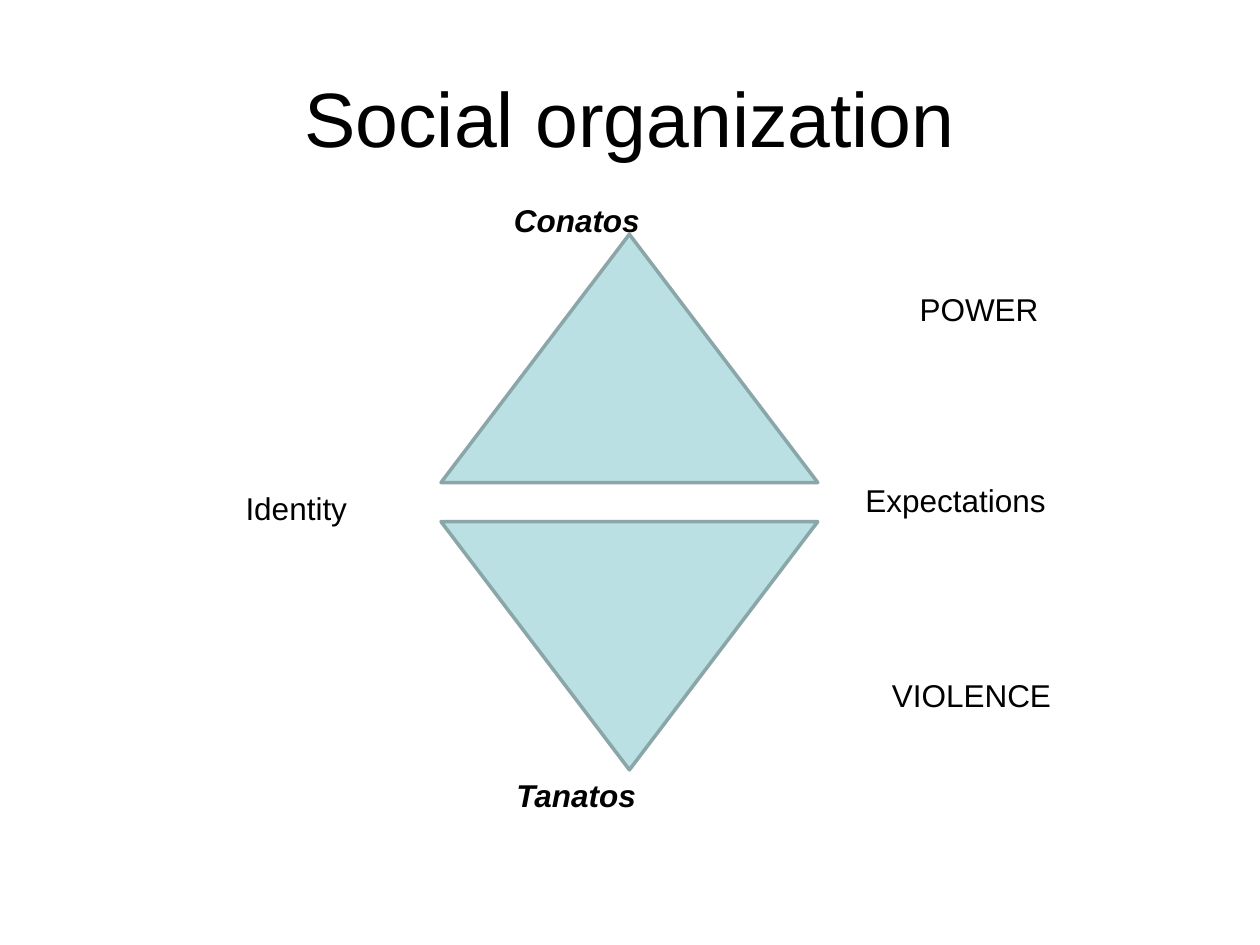
from dataclasses import dataclass

from pptx import Presentation
from pptx.dml.color import RGBColor
from pptx.enum.shapes import MSO_SHAPE
from pptx.enum.text import MSO_ANCHOR, MSO_AUTO_SIZE, PP_ALIGN
from pptx.slide import Slide
from pptx.util import Inches, Pt

TRIANGLE = MSO_SHAPE.ISOSCELES_TRIANGLE
MIDDLE = MSO_ANCHOR.MIDDLE
FIT_SHAPE = MSO_AUTO_SIZE.SHAPE_TO_FIT_TEXT
CENTER = PP_ALIGN.CENTER

COLORS = {"text": "000000", "fill": "BBE0E3", "outline": "8AA6A8"}
FONT = "Arial"
LABEL_HEIGHT = 0.4
TRIANGLE_LEFT, TRIANGLE_WIDTH, TRIANGLE_HEIGHT = 3.5, 2.99, 1.97


@dataclass(frozen=True)
class Label:
    text: str
    left: float
    top: float
    width: float
    emphasis: bool = False


@dataclass(frozen=True)
class Half:
    top: float
    rotation: int


HALVES = [Half(1.86, 0), Half(4.14, 180)]
LABELS = [
    Label("Conatos", 3.98, 1.55, 1.21, emphasis=True),
    Label("Tanatos", 4, 6.11, 1.23, emphasis=True),
    Label("Identity", 1.85, 3.83, 1.02),
    Label("POWER", 7.2, 2.25, 1.16),
    Label("VIOLENCE", 6.98, 5.32, 1.48),
    Label("Expectations", 6.77, 3.77, 1.65),
]


def color(name: str) -> RGBColor:
    return RGBColor.from_string(COLORS[name])


def format_font(font, **values) -> None:
    for attribute, value in {"name": FONT, **values}.items():
        setattr(font, attribute, value)
    font.color.rgb = color("text")


def add_title(slide: Slide, text: str) -> None:
    title = slide.shapes.add_textbox(Inches(0.5), Inches(0.3), Inches(9), Inches(1.25))
    frame = title.text_frame
    frame.word_wrap = True
    frame.vertical_anchor = MIDDLE
    heading = frame.paragraphs[0]
    heading.alignment = CENTER
    heading.text = text
    format_font(heading.runs[0].font, size=Pt(44))


def add_half(slide: Slide, half: Half) -> None:
    """Draw one triangle of the split diamond."""
    triangle = slide.shapes.add_shape(
        TRIANGLE, Inches(TRIANGLE_LEFT), Inches(half.top),
        Inches(TRIANGLE_WIDTH), Inches(TRIANGLE_HEIGHT))
    triangle.rotation = half.rotation
    triangle.shadow.inherit = False
    triangle.fill.solid()
    triangle.fill.fore_color.rgb = color("fill")
    triangle.line.color.rgb = color("outline")
    triangle.line.width = Pt(2)


def add_label(slide: Slide, label: Label) -> None:
    box = slide.shapes.add_textbox(
        Inches(label.left), Inches(label.top), Inches(label.width), Inches(LABEL_HEIGHT))
    frame = box.text_frame
    frame.word_wrap = False
    frame.auto_size = FIT_SHAPE
    frame.text = label.text
    format_font(frame.paragraphs[0].runs[0].font, size=Pt(18),
                bold=label.emphasis, italic=label.emphasis)


def main() -> None:
    presentation = Presentation()
    presentation.slide_width = Inches(10)
    presentation.slide_height = Inches(7.5)
    slide = presentation.slides.add_slide(presentation.slide_layouts[6])
    add_title(slide, "Social organization")
    for half in HALVES:
        add_half(slide, half)
    for label in LABELS:
        add_label(slide, label)
    presentation.save("out.pptx")


if __name__ == "__main__":
    main()
